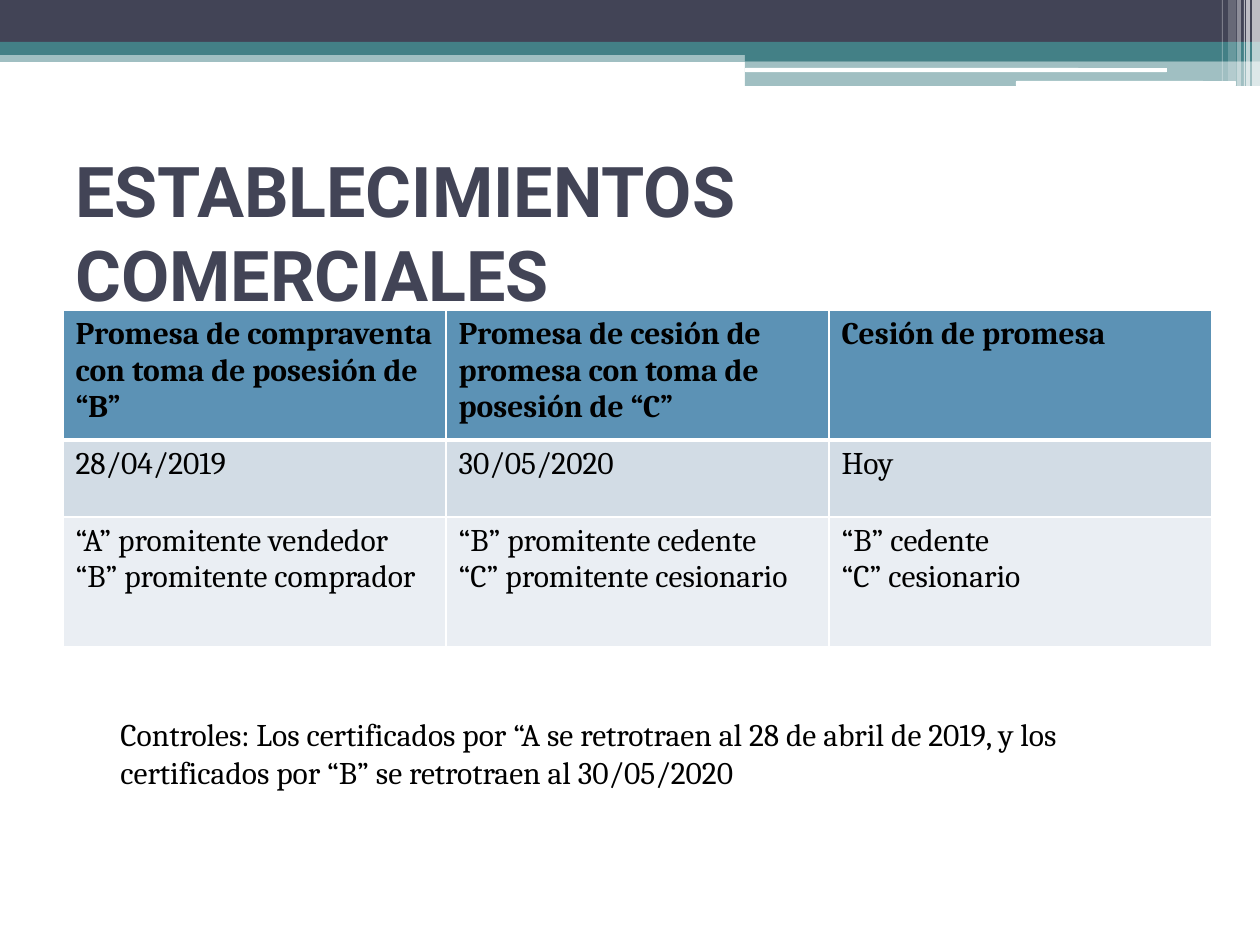
from dataclasses import dataclass

import lxml.etree
import pptx
import pptx.dml.color
import pptx.enum.shapes
import pptx.enum.text
import pptx.oxml.ns
import pptx.util

SHAPE = pptx.enum.shapes.MSO_SHAPE
EMU_PER_PX = 914400 / 126


@dataclass(frozen=True)
class Theme:
    navy: str = "424456"
    teal: str = "438086"
    white: str = "FFFFFF"
    black: str = "000000"
    row_fills: tuple[str, ...] = ("5C92B5", "D2DCE5", "EAEEF3")
    title_font: str = "Roboto"
    body_font: str = "Cambria"
    title_size: int = 40
    body_size: int = 18


THEME = Theme()


@dataclass(frozen=True)
class Band:
    """A bar of the header, in px, with opacity in percent."""
    left: int
    top: int
    width: int
    height: int
    color: str
    opacity: int = 100
    rounded: bool = False


BANDS = [
    Band(0, 50, 1260, 12, THEME.teal, 50),
    Band(0, 0, 1260, 42, THEME.navy),
    Band(0, 42, 1260, 13, THEME.teal),
    Band(745, 49, 515, 12, THEME.teal),
    Band(745, 61, 515, 25, THEME.teal, 50),
    Band(745, 68, 422, 4, THEME.white, rounded=True),
    Band(1016, 81, 220, 5, THEME.white, rounded=True),
    Band(1252, 0, 8, 86, THEME.white, 65),
    Band(1246, 0, 4, 86, THEME.white, 65),
    Band(1244, 0, 1, 86, THEME.white, 60),
    Band(1237, 0, 4, 86, THEME.white, 40),
    Band(1228, 0, 8, 81, THEME.white, 20),
    Band(1222, 0, 1, 81, THEME.white, 30),
]

COLUMN_WIDTH = 383
ROW_HEIGHTS = (130, 77, 130)
ROWS = [
    ("Promesa de compraventa con toma de posesión de “B”",
     "Promesa de cesión de promesa con toma de posesión de “C”",
     "Cesión de promesa"),
    ("28/04/2019", "30/05/2020", "Hoy"),
    ("“A” promitente vendedor\n“B” promitente comprador",
     "“B” promitente cedente\n“C” promitente cesionario",
     "“B” cedente\n“C” cesionario"),
]
NOTE = ("Controles: Los certificados por “A se retrotraen al 28 de abril de 2019, "
        "y los certificados por “B” se retrotraen al 30/05/2020")


def px(n: int) -> int:
    return round(n * EMU_PER_PX)


def rgb(color: str) -> pptx.dml.color.RGBColor:
    return pptx.dml.color.RGBColor.from_string(color)


def sub(parent, tag: str, **attrs: str):
    return lxml.etree.SubElement(parent, pptx.oxml.ns.qn(tag), **attrs)


def style_text(tf, font: str, size: int, color: str, bold: bool = False) -> None:
    for p in tf.paragraphs:
        p.font.name = font
        p.font.size = pptx.util.Pt(size)
        p.font.bold = bold
        p.font.color.rgb = rgb(color)


def add_band(s, band: Band) -> None:
    kind = SHAPE.ROUNDED_RECTANGLE if band.rounded else SHAPE.RECTANGLE
    sp = s.shapes.add_shape(kind, px(band.left), px(band.top),
                            px(band.width), px(band.height))
    sp.shadow.inherit = False
    sp.line.fill.background()
    sp.fill.solid()
    sp.fill.fore_color.rgb = rgb(band.color)
    if band.opacity < 100:
        clr = sp.fill._xPr.find(".//" + pptx.oxml.ns.qn("a:srgbClr"))
        sub(clr, "a:alpha", val=str(band.opacity * 1000))


def set_title(s) -> None:
    sp = s.shapes.title
    sp.left, sp.top, sp.width, sp.height = px(63), px(158), px(1134), px(147)
    tf = sp.text_frame
    tf.text = "ESTABLECIMIENTOS COMERCIALES"
    tf.word_wrap = True
    tf.auto_size = pptx.enum.text.MSO_AUTO_SIZE.NONE
    tf.vertical_anchor = pptx.enum.text.MSO_ANCHOR.MIDDLE
    tf.paragraphs[0].alignment = pptx.enum.text.PP_ALIGN.LEFT
    style_text(tf, THEME.title_font, THEME.title_size, THEME.navy, True)


def set_borders(cell, row: int) -> None:
    """White rules, thicker between the header and the first data row."""
    tc_pr = cell._tc.get_or_add_tcPr()
    widths = {"L": 1, "R": 1, "T": 3 if row == 1 else 1, "B": 3 if row == 0 else 1}
    for side, width in widths.items():
        ln = sub(tc_pr, f"a:ln{side}", w=str(pptx.util.Pt(width)))
        sub(sub(ln, "a:solidFill"), "a:srgbClr", val=THEME.white)


def add_table(s) -> None:
    table = s.shapes.add_table(len(ROWS), len(ROWS[0]), px(63), px(310),
                               px(COLUMN_WIDTH * len(ROWS[0])),
                               px(sum(ROW_HEIGHTS))).table
    for column in table.columns:
        column.width = px(COLUMN_WIDTH)
    for i, texts in enumerate(ROWS):
        table.rows[i].height = px(ROW_HEIGHTS[i])
        for j, text in enumerate(texts):
            cell = table.cell(i, j)
            cell.text = text
            style_text(cell.text_frame, THEME.body_font, THEME.body_size,
                       THEME.black, i == 0)
            set_borders(cell, i)
            cell.fill.solid()
            cell.fill.fore_color.rgb = rgb(THEME.row_fills[i])


def add_note(s) -> None:
    tf = s.shapes.add_textbox(px(108), px(709), px(1024), px(89)).text_frame
    tf.word_wrap = True
    tf.auto_size = pptx.enum.text.MSO_AUTO_SIZE.SHAPE_TO_FIT_TEXT
    tf.text = NOTE
    style_text(tf, THEME.body_font, THEME.body_size, THEME.black)


def main() -> None:
    prs = pptx.Presentation()
    prs.slide_width, prs.slide_height = px(1260), px(945)
    s = prs.slides.add_slide(prs.slide_layouts[5])
    for band in BANDS:
        add_band(s, band)
    set_title(s)
    add_table(s)
    add_note(s)
    prs.save("out.pptx")


if __name__ == "__main__":
    main()
